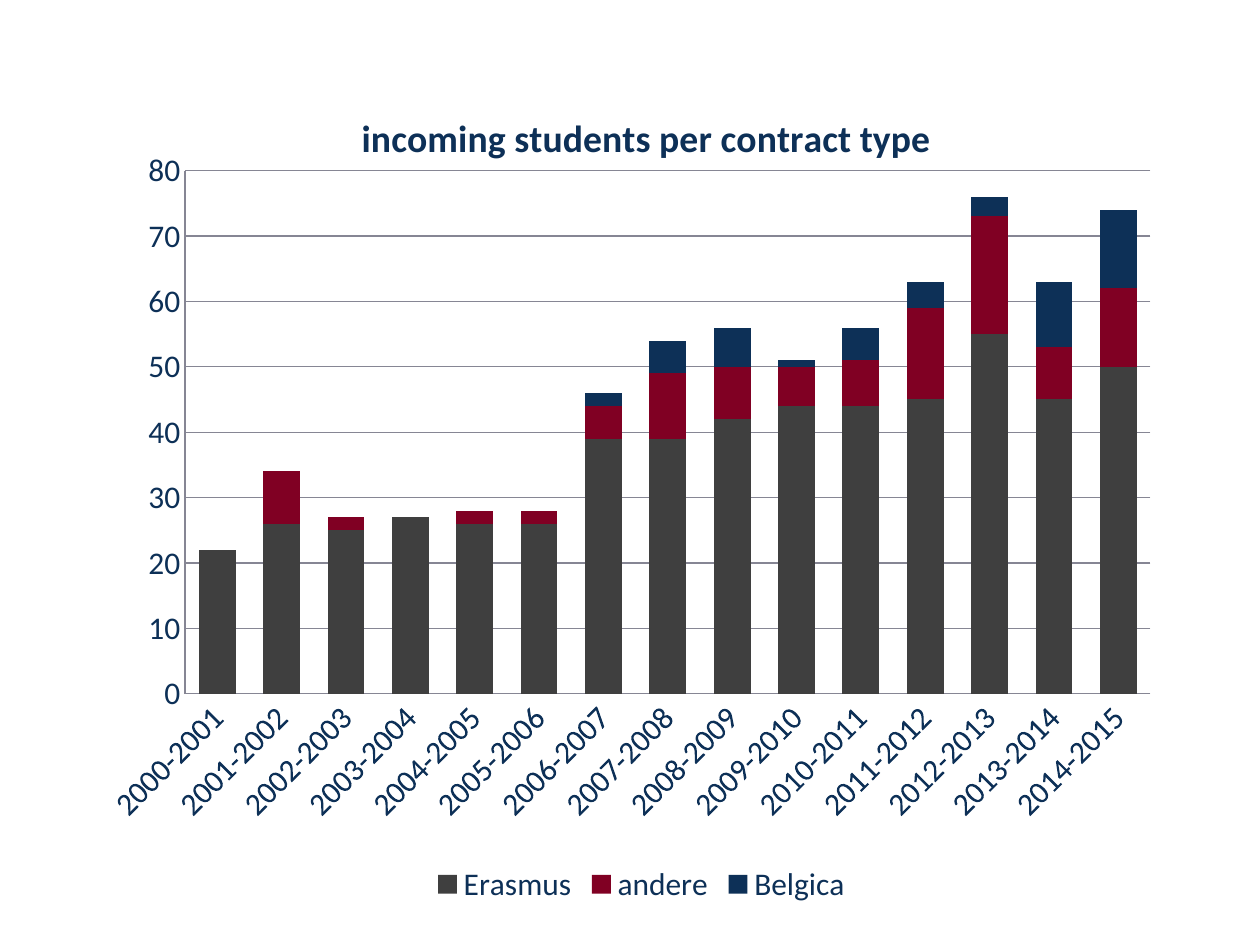
import pptx
import pptx.util
import pptx.chart.data
import pptx.dml.color
import pptx.enum.chart
import pptx.oxml

PX = 9144
COLORS = {"text": "0D3057", "line": "868694", "Erasmus": "3F3F3F", "andere": "800023", "Belgica": "0D3057"}
STUDENTS = {
    "Erasmus": [22, 26, 25, 27, 26, 26, 39, 39, 42, 44, 44, 45, 55, 45, 50],
    "andere": [None, 8, 2, 0, 2, 2, 5, 10, 8, 6, 7, 14, 18, 8, 12],
    "Belgica": [None] * 6 + [2, 5, 6, 1, 5, 4, 3, 10, 12],
}


def color(name):
    return pptx.dml.color.RGBColor.from_string(COLORS[name])


def manual_layout(target, **places):
    values = "".join(f'<c:{key} val="{value}"/>' for key, value in places.items())
    layout = pptx.oxml.parse_xml(
        '<c:layout xmlns:c="http://schemas.openxmlformats.org/drawingml/2006/chart">'
        f"<c:manualLayout>{values}</c:manualLayout></c:layout>"
    )
    for old in target.xpath("c:layout"):
        target.remove(old)
    target.insert(len(target.xpath("c:tx")), layout)


deck = pptx.Presentation()
deck.slide_width = 1000 * PX
deck.slide_height = 750 * PX
page = deck.slides.add_slide(deck.slide_layouts[6])

data = pptx.chart.data.CategoryChartData()
data.categories = [f"{year}-{year + 1}" for year in range(2000, 2015)]
for name, values in STUDENTS.items():
    data.add_series(name, values)

chart = page.shapes.add_chart(
    pptx.enum.chart.XL_CHART_TYPE.COLUMN_STACKED, 85 * PX, 63 * PX, 845 * PX, 659 * PX, data
).chart
chart.font.name = "Calibri"
chart.font.size = pptx.util.Pt(18)
chart.font.color.rgb = color("text")

title = chart.chart_title
title.text_frame.text = "incoming students per contract type "
title_font = title.text_frame.paragraphs[0].font
title_font.name = "Calibri"
title_font.size = pptx.util.Pt(21.6)
title_font.bold = True
title_font.color.rgb = color("text")
title.include_in_layout = False
manual_layout(title._element, xMode="edge", yMode="edge", x=0.23, y=0.03)

plot = chart.plots[0]
plot.gap_width = 75
plot.overlap = 100
plot.vary_by_categories = False
for series in plot.series:
    series.format.fill.solid()
    series.format.fill.fore_color.rgb = color(series.name)
manual_layout(
    chart._chartSpace.xpath("c:chart/c:plotArea")[0],
    layoutTarget="inner", xMode="edge", yMode="edge", x=0.07, y=0.11, w=0.91, h=0.63,
)

years = chart.category_axis
counts = chart.value_axis
counts.minimum_scale = 0
counts.maximum_scale = 80
counts.major_unit = 10
counts.has_major_gridlines = True
for axis in (years, counts):
    axis.major_tick_mark = pptx.enum.chart.XL_TICK_MARK.NONE
    axis.minor_tick_mark = pptx.enum.chart.XL_TICK_MARK.NONE
    axis.tick_labels.font.size = pptx.util.Pt(18)
    axis.tick_labels.font.color.rgb = color("text")
for part in (years, counts, counts.major_gridlines):
    part.format.line.color.rgb = color("line")
    part.format.line.width = pptx.util.Pt(0.75)
years._element.xpath("c:txPr/a:bodyPr")[0].set("rot", "-2700000")

chart.has_legend = True
chart.legend.position = pptx.enum.chart.XL_LEGEND_POSITION.BOTTOM
chart.legend.include_in_layout = False

deck.save("out.pptx")
